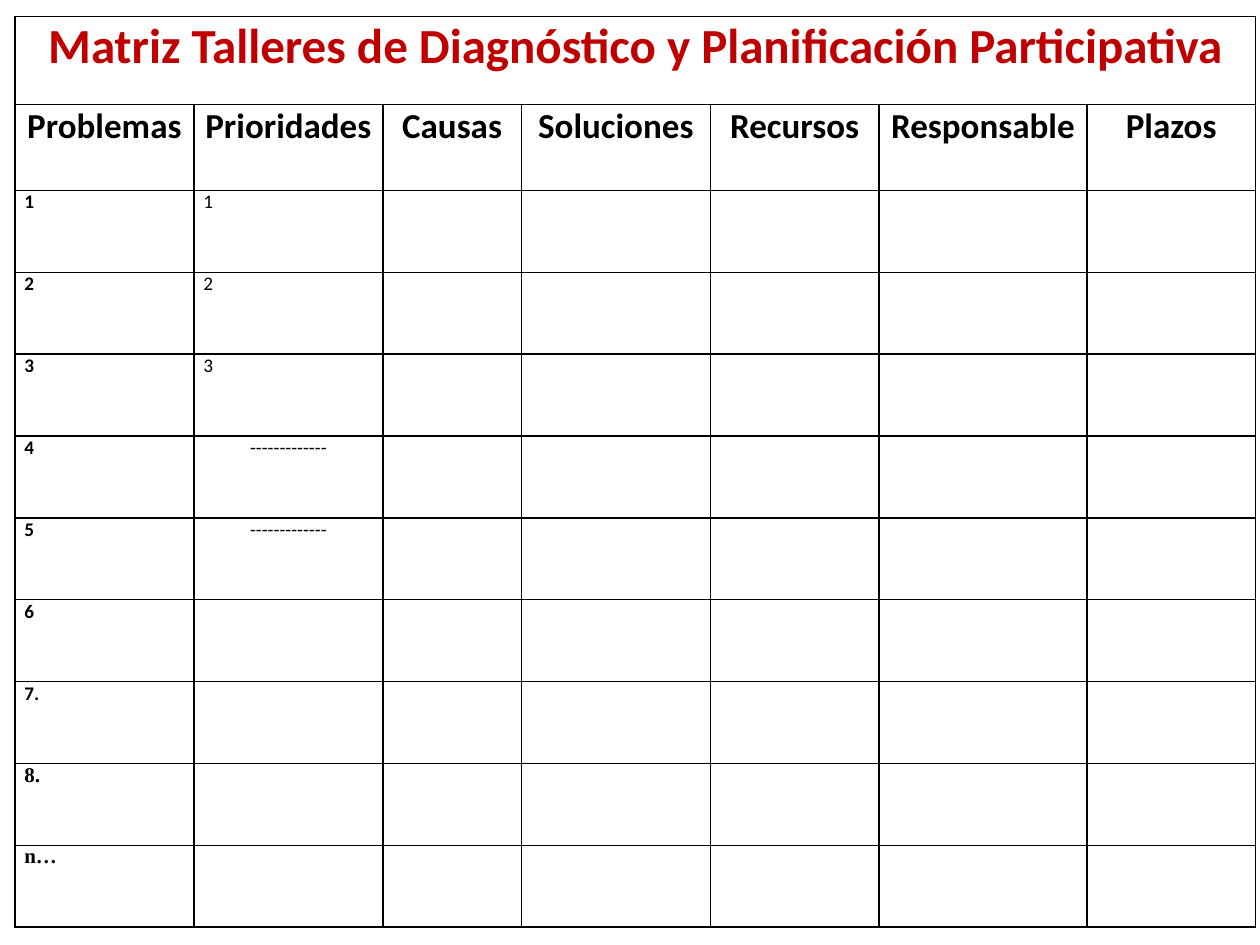
from pptx import Presentation
from pptx.dml.color import RGBColor
from pptx.enum import text
from pptx.oxml import parse_xml
from pptx.oxml.ns import nsdecls
from pptx.util import Cm, Pt

BLACK = RGBColor(0x00, 0x00, 0x00)
WHITE = RGBColor(0xFF, 0xFF, 0xFF)
RED = RGBColor(0xC0, 0x00, 0x00)

CENTER, JUSTIFY = text.PP_ALIGN.CENTER, text.PP_ALIGN.JUSTIFY
BORDER = (
    '<a:{side} {ns} w="12700"><a:solidFill><a:srgbClr val="{color}"/></a:solidFill></a:{side}>'
)

TITLE = "Matriz Talleres de Diagnóstico y Planificación Participativa"
HEADINGS = ["Problemas", "Prioridades", "Causas", "Soluciones",
            "Recursos", "Responsable", "Plazos"]
PROBLEMS = ["1", "2", "3", "4", "5", "6", "7.", "8.", "n…"]
DASHES = "-" * 13
PRIORITIES = ["1", "2", "3", DASHES, DASHES]

COLUMN_WIDTHS = [3.61, 3.81, 2.79, 3.81, 3.4, 4.19, 3.4]
ROW_HEIGHTS = [1.78, 1.73] + [1.65] * len(PROBLEMS)


def write(cell, words, alignment, **formats):
    """Put one formatted paragraph in a cell."""
    paragraph = cell.text_frame.paragraphs[0]
    paragraph.alignment = alignment
    run = paragraph.add_run()
    run.text = words
    font = run.font
    font.color.rgb = formats.pop("color", BLACK)
    for name, value in ({"name": "Calibri", "bold": True} | formats).items():
        setattr(font, name, value)


presentation = Presentation()
presentation.slide_width, presentation.slide_height = Cm(25.4), Cm(19.05)
slide = presentation.slides.add_slide(presentation.slide_layouts[6])

# Table grid
table = slide.shapes.add_table(
    len(ROW_HEIGHTS), len(COLUMN_WIDTHS), Cm(0.3), Cm(0.33),
    Cm(sum(COLUMN_WIDTHS)), Cm(sum(ROW_HEIGHTS))).table
table.first_row = table.horz_banding = False
for column, width in zip(table.columns, COLUMN_WIDTHS):
    column.width = Cm(width)
for row, height in zip(table.rows, ROW_HEIGHTS):
    row.height = Cm(height)

# Cell margins, borders and fill
cell_format = {"margin_left": Cm(0.19), "margin_right": Cm(0.19),
               "margin_top": 0, "margin_bottom": 0}
for cell in table.iter_cells():
    for name, value in cell_format.items():
        setattr(cell, name, value)
    properties = cell._tc.get_or_add_tcPr()
    for side in ("lnL", "lnR", "lnT", "lnB"):
        properties.append(parse_xml(
            BORDER.format(side=side, ns=nsdecls("a"), color=BLACK)))
    cell.fill.solid()
    cell.fill.fore_color.rgb = WHITE

# Title across the whole width
title_cell = table.cell(0, 0)
title_cell.merge(table.cell(0, len(HEADINGS) - 1))
write(title_cell, TITLE, CENTER, size=Pt(28), color=RED)

# Column headings
for column, heading in enumerate(HEADINGS):
    write(table.cell(1, column), heading, CENTER, size=Pt(20))

# Problems; the last two are set in a serif face
for row, problem in enumerate(PROBLEMS, start=2):
    serif = problem in ("8.", "n…")
    write(table.cell(row, 0), problem, JUSTIFY,
          size=Pt(12 if serif else 11),
          name="Times New Roman" if serif else "Calibri")

# Priorities
for row, priority in enumerate(PRIORITIES, start=2):
    write(table.cell(row, 1), priority,
          CENTER if priority == DASHES else JUSTIFY, size=Pt(11), bold=False)

presentation.save("out.pptx")
